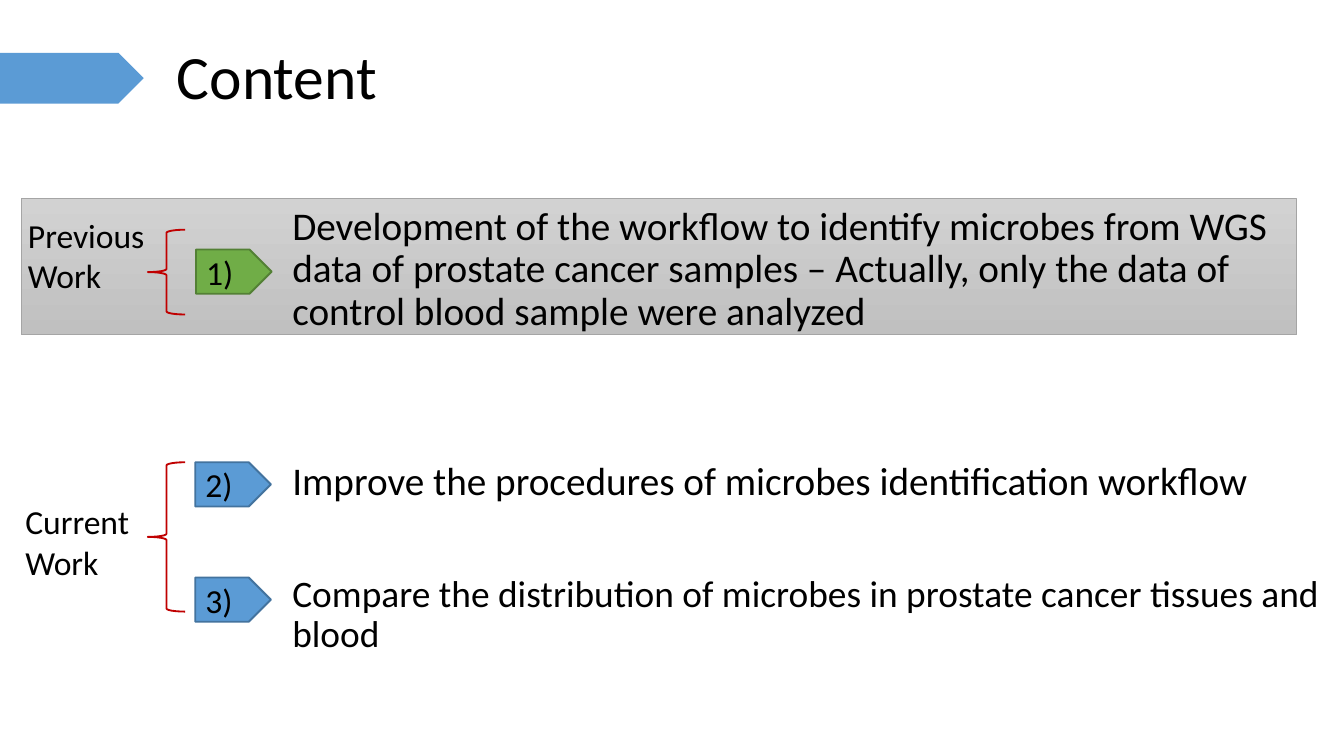
from pptx import Presentation
from pptx.dml.color import RGBColor
from pptx.enum.shapes import MSO_SHAPE
from pptx.enum.text import MSO_ANCHOR, PP_ALIGN
from pptx.util import Pt

BLACK, BLUE, NAVY = "000000", "5B9BD5", "43739E"
GREEN, MOSS, RED, GREY = "70AD47", "538035", "C00000", "A5A5A5"
TIGHT = dict(margin_left=Pt(5.4), margin_right=Pt(5.4),
             margin_top=Pt(2.7), margin_bottom=Pt(2.7))
LOOSE = dict(margin_left=Pt(7.2), margin_right=Pt(7.2),
             margin_top=Pt(3.6), margin_bottom=Pt(3.6))


def color(code):
    return RGBColor.from_string(code)


def apply(item, **form):
    for name, value in form.items():
        setattr(item, name, value)


class Deck:
    font = "Calibri"

    def __init__(self, width, height):
        self.file = Presentation()
        apply(self.file, slide_width=Pt(width), slide_height=Pt(height))
        self.slide = self.file.slides.add_slide(self.file.slide_layouts[5])

    def fill_text(self, frame, items, inset, anchor=MSO_ANCHOR.TOP, lead=1.0):
        apply(frame, word_wrap=True, vertical_anchor=anchor, **inset)
        for num, (text, size, gap) in enumerate(items):
            para = frame.add_paragraph() if num else frame.paragraphs[0]
            apply(para, alignment=PP_ALIGN.LEFT, line_spacing=lead,
                  space_before=Pt(gap))
            run = para.add_run()
            run.text = text
            apply(run.font, name=self.font, size=Pt(size))
            run.font.color.rgb = color(BLACK)

    def title(self, text, left, top, width, height):
        head = self.slide.shapes.title
        apply(head, left=Pt(left), top=Pt(top), width=Pt(width), height=Pt(height))
        self.fill_text(head.text_frame, [(text, 33, 0)], TIGHT,
                       MSO_ANCHOR.MIDDLE, 0.9)

    def text(self, items, left, top, width, height, inset=LOOSE, lead=1.0):
        box = self.slide.shapes.add_textbox(Pt(left), Pt(top), Pt(width), Pt(height))
        self.fill_text(box.text_frame, items, inset, lead=lead)

    def shape(self, kind, left, top, width, height, fill=None, line=None, weight=1):
        form = self.slide.shapes.add_shape(
            kind, Pt(left), Pt(top), Pt(width), Pt(height))
        form.shadow.inherit = False
        if fill:
            form.fill.solid()
            form.fill.fore_color.rgb = color(fill)
        else:
            form.fill.background()
        if line:
            form.line.color.rgb = color(line)
            form.line.width = Pt(weight)
        else:
            form.line.fill.background()
        return form

    def band(self, left, top, width, height):
        form = self.shape(MSO_SHAPE.RECTANGLE, left, top, width, height,
                          line=GREY, weight=0.5)
        form.fill.gradient()
        form.fill.gradient_angle = 270
        for stop, code in zip(form.fill.gradient_stops, ("D2D2D2", "C0C0C0")):
            stop.color.rgb = color(code)

    def tag(self, text, left, top, fill, line):
        form = self.shape(MSO_SHAPE.PENTAGON, left, top, 40.5, 23.7, fill, line)
        self.fill_text(form.text_frame, [(text, 18, 0)], TIGHT, MSO_ANCHOR.MIDDLE)

    def brace(self, top, height):
        self.shape(MSO_SHAPE.LEFT_BRACE, 79.2, top, 20, height, line=RED)

    def save(self):
        self.file.save("out.pptx")


def main():
    deck = Deck(720, 405)
    deck.title("Content", 89.3, 3.6, 620.6, 78.5)
    deck.shape(MSO_SHAPE.PENTAGON, 0, 28.3, 77, 27.2, BLUE)

    deck.band(11.5, 106.4, 683.3, 73)
    deck.text([("Previous Work", 18, 0)], 7.9, 111.6, 83.5, 51)
    deck.brace(123.1, 45.4)
    deck.tag("1)", 105, 133.7, GREEN, MOSS)

    deck.text([("Current Work", 18, 0)], 6.5, 265, 74.2, 51)
    deck.brace(247.7, 80)
    for text, top in (("2)", 247.7), ("3)", 309.4)):
        deck.tag(text, 104.6, top, BLUE, NAVY)

    deck.text([
        ("Development of the workflow to identify microbes from WGS data of "
         "prostate cancer samples – Actually, only the data of control blood "
         "sample were analyzed", 21, 0),
        ("Improve the procedures of microbes identification workflow", 21, 68.6),
        ("Compare the distribution of microbes in prostate cancer tissues and "
         "blood", 20, 38.1),
    ], 151.2, 108, 566.6, 257, TIGHT, 0.9)
    deck.save()


if __name__ == "__main__":
    main()
